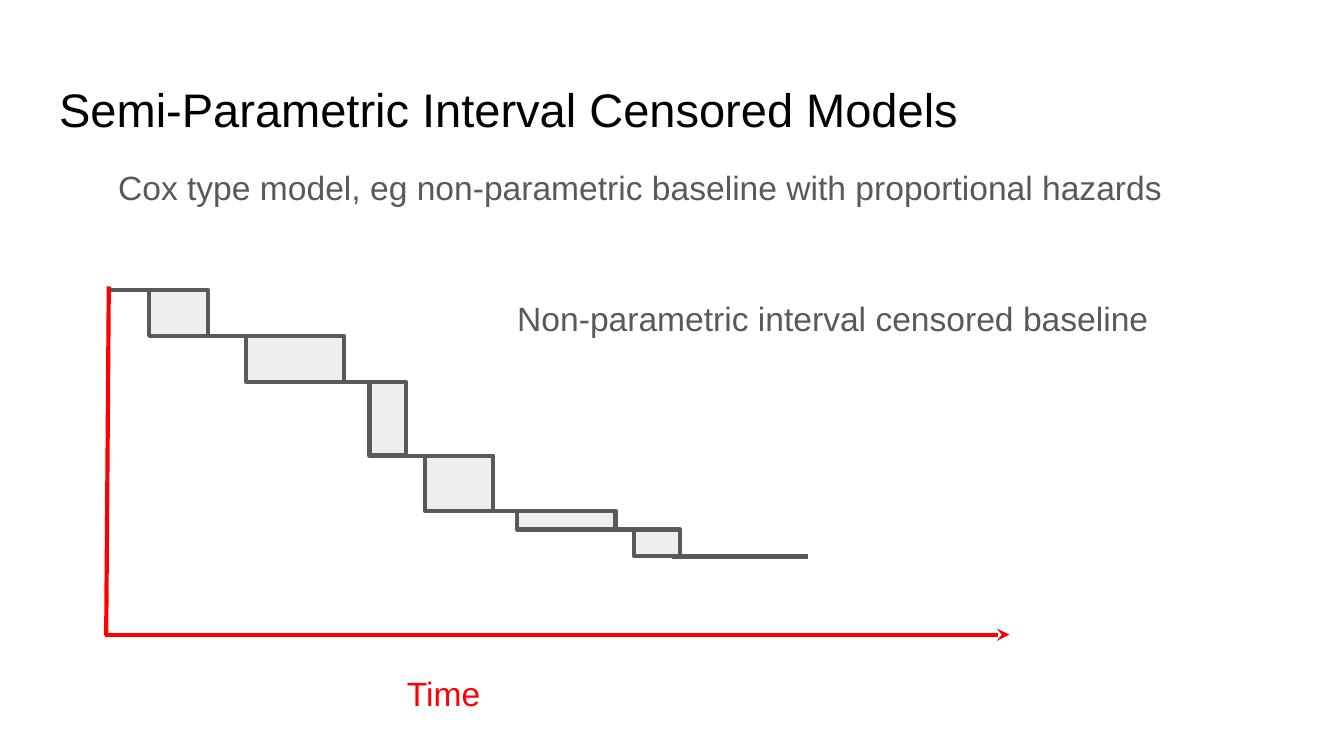
from lxml import etree
from pptx import Presentation
from pptx.dml.color import RGBColor
from pptx.enum.shapes import MSO_CONNECTOR as CONN, MSO_SHAPE as SHAPE
from pptx.enum.text import MSO_ANCHOR as ANCHOR, MSO_AUTO_SIZE as FIT, PP_ALIGN as ALIGN
from pptx.oxml.ns import qn
from pptx.util import Pt

BLACK = RGBColor(0x00, 0x00, 0x00)
RED = RGBColor(0xFF, 0x00, 0x00)
GRAY = RGBColor(0x59, 0x59, 0x59)
LIGHT = RGBColor(0xEE, 0xEE, 0xEE)

FONT = "Arial"
LINE_WIDTH = 2.25
INSET = 7.2

# Survival curve: left, width and drop of each censoring interval, and the
# left end of the level line that leads into it
CURVE_TOP = 155.5
INTERVALS = [
    (79.9, 31.7, 24.5, 59.3),
    (131.8, 52.6, 24.5, 111.8),
    (198, 19.4, 39.6, 177.7),
    (227.5, 36.7, 29.5, 203.3),
    (277.2, 52.6, 10.1, 257.8),
    (339.8, 24.5, 14.4, 324.2),
]
LEVEL_LENGTH = 24.2
TAIL = (360, 432.7)


def write(sp, text, size=18, color=GRAY, align=ALIGN.LEFT, anchor=ANCHOR.TOP):
    """Put one formatted paragraph into a shape."""
    tf = sp.text_frame
    tf.word_wrap = True
    tf.auto_size = FIT.NONE
    tf.vertical_anchor = anchor
    tf.margin_left = tf.margin_right = Pt(INSET)
    tf.margin_top = tf.margin_bottom = Pt(INSET)
    p = tf.paragraphs[0]
    p.alignment = align
    r = p.add_run()
    r.text = text
    r.font.name = FONT
    r.font.size = Pt(size)
    r.font.color.rgb = color


def add_text(s, text, x, y, w, h, **fmt):
    write(s.shapes.add_textbox(Pt(x), Pt(y), Pt(w), Pt(h)), text, **fmt)


def add_title(s, text, x, y, w, h, **fmt):
    sp = s.shapes.title
    sp.left, sp.top, sp.width, sp.height = Pt(x), Pt(y), Pt(w), Pt(h)
    write(sp, text, **fmt)


def add_box(s, x, y, w, h):
    sp = s.shapes.add_shape(SHAPE.RECTANGLE, Pt(x), Pt(y), Pt(w), Pt(h))
    sp.shadow.inherit = False
    sp.fill.solid()
    sp.fill.fore_color.rgb = LIGHT
    sp.line.color.rgb = GRAY
    sp.line.width = Pt(LINE_WIDTH)


def add_line(s, x1, y1, x2, y2, color=GRAY, arrow=False):
    cx = s.shapes.add_connector(CONN.STRAIGHT, Pt(x1), Pt(y1), Pt(x2), Pt(y2))
    cx.line.color.rgb = color
    cx.line.width = Pt(LINE_WIDTH)
    if arrow:
        etree.SubElement(cx.line._get_or_add_ln(), qn("a:tailEnd"), type="stealth")
    etree.SubElement(cx._element.spPr, qn("a:effectLst"))


def add_curve(s):
    """Boxes step down from one level to the next, joined by level lines."""
    y = CURVE_TOP
    levels = []
    for x, w, drop, start in INTERVALS:
        add_box(s, x, y, w, drop)
        levels.append((start + LEVEL_LENGTH, start, y))
        y += drop
    levels.append((TAIL[1], TAIL[0], y))
    for right, left, level in levels:
        add_line(s, right, level, left, level)


def main():
    prs = Presentation()
    prs.slide_width, prs.slide_height = Pt(720), Pt(405)
    s = prs.slides.add_slide(prs.slide_layouts[5])

    add_title(s, "Semi-Parametric Interval Censored Models", 24.5, 35.3, 671, 45.4,
              size=25.2, color=BLACK, anchor=ANCHOR.MIDDLE)

    # Axes
    add_line(s, 56.2, 340, 540.7, 340, color=RED, arrow=True)
    add_text(s, "Time", 193, 353.5, 89.3, 37.4, color=RED, align=ALIGN.CENTER)
    add_line(s, 56.9, 340.6, 58.3, 153.4, color=RED)

    add_curve(s)

    # Captions
    add_text(s, "Non-parametric interval censored baseline", 270, 152.6, 381, 34.6)
    add_text(s, "Cox type model, eg non-parametric baseline with proportional hazards",
             56.2, 82.1, 592, 39.6)

    prs.save("out.pptx")


if __name__ == "__main__":
    main()
